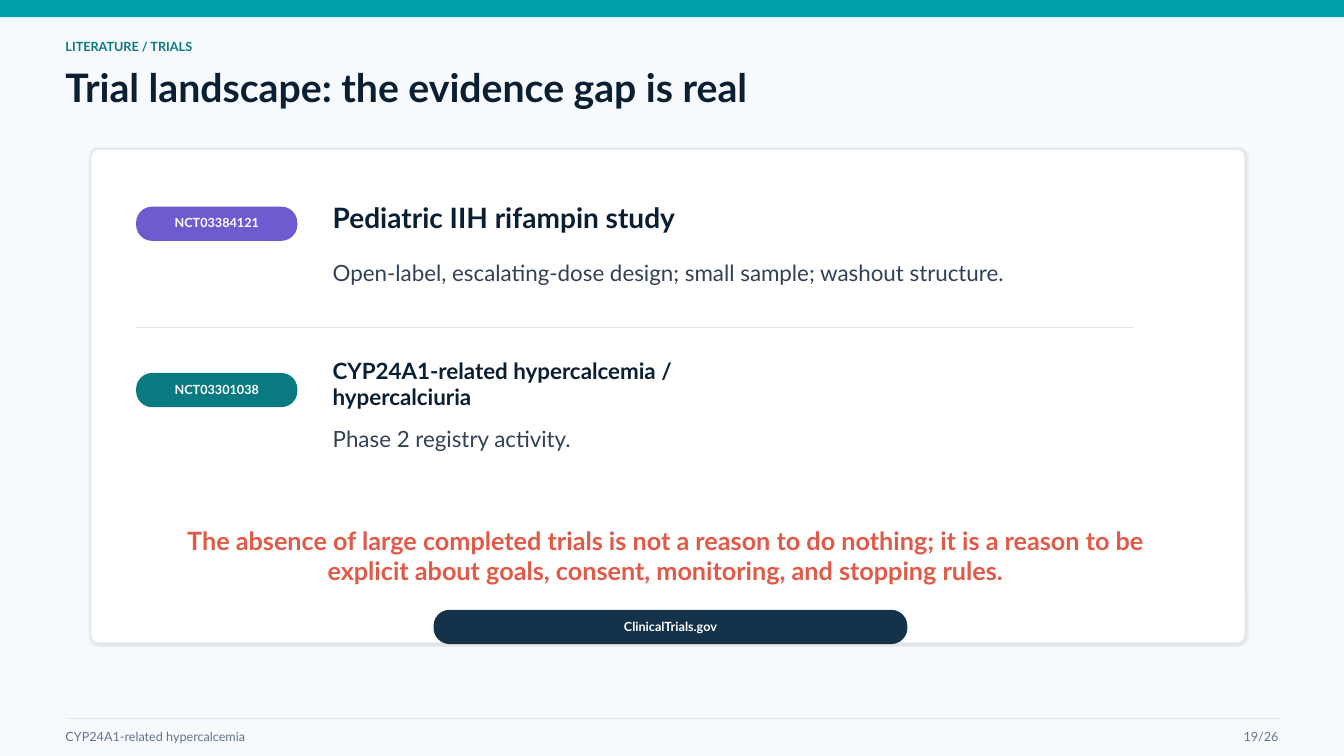
"""Builds the trial landscape slide."""
from dataclasses import dataclass
from lxml import etree
from pptx import Presentation
from pptx import util as u
from pptx.dml.color import RGBColor
from pptx.enum import shapes, text
from pptx.oxml.ns import qn

TAG = "LITERATURE / TRIALS"
TITLE = "Trial landscape: the evidence gap is real"
TRIALS = [
    {"id": "NCT03384121", "name": "Pediatric IIH rifampin study", "size": 20,
     "note": "Open-label, escalating-dose design; small sample; washout structure.",
     "color": "6D5BD0"},
    {"id": "NCT03301038", "name": "CYP24A1-related hypercalcemia / hypercalciuria", "size": 16,
     "note": "Phase 2 registry activity.", "color": "087A80"},
]
POINT = ("The absence of large completed trials is not a reason to do nothing; "
         "it is a reason to be explicit about goals, consent, monitoring, and stopping rules.")
SOURCE = "ClinicalTrials.gov"
FOOTER = "CYP24A1-related hypercalcemia"
PAGE = "19/26"


@dataclass(frozen=True)
class Theme:
    """Colours, font and type sizes."""
    font: str = "Lato"
    back: str = "F7FAFC"
    bar: str = "00A0A8"
    teal: str = "087A80"
    ink: str = "0B1F33"
    body: str = "334155"
    mute: str = "64748B"
    rule: str = "E2E8F0"
    white: str = "FFFFFF"
    alert: str = "E05A47"
    navy: str = "14324A"
    small: int = 9
    mid: int = 16
    call: int = 18
    head: int = 28


T = Theme()
LEFT, CENTER, RIGHT = text.PP_ALIGN.LEFT, text.PP_ALIGN.CENTER, text.PP_ALIGN.RIGHT
RECT, ROUND = shapes.MSO_SHAPE.RECTANGLE, shapes.MSO_SHAPE.ROUNDED_RECTANGLE


def rgb(color):
    """Turn a hex string into a colour."""
    return RGBColor.from_string(color)


def label(slide, box, words, size, color, bold=False, align=LEFT):
    """Add one line of text in a box without margins."""
    frame = slide.shapes.add_textbox(*map(u.Inches, box)).text_frame
    frame.word_wrap = True
    frame.vertical_anchor = text.MSO_ANCHOR.MIDDLE
    frame.margin_left = frame.margin_right = frame.margin_top = frame.margin_bottom = 0
    para = frame.paragraphs[0]
    para.alignment = align
    run = para.add_run()
    run.text = words
    run.font.name, run.font.size, run.font.bold = T.font, u.Pt(size), bold
    run.font.color.rgb = rgb(color)


def block(slide, kind, box, fill, round_by=None):
    """Add a filled shape with no line or shadow."""
    shape = slide.shapes.add_shape(kind, *map(u.Inches, box))
    shape.shadow.inherit = False
    shape.fill.solid()
    shape.fill.fore_color.rgb = rgb(fill)
    shape.line.fill.background()
    if round_by is not None:
        shape.adjustments[0] = round_by
    return shape


def pill(slide, left, top, width, words, fill):
    """Add a rounded badge with its label."""
    block(slide, ROUND, (left, top, width, 0.34), fill, 0.47)
    label(slide, (left + 0.08, top + 0.07, width - 0.16, 0.18), words,
          T.small, T.white, True, CENTER)


def rule(slide, left, right, top):
    """Add a thin level line."""
    line = slide.shapes.add_connector(
        shapes.MSO_CONNECTOR.STRAIGHT, *map(u.Inches, (left, top, right, top)))
    line.line.color.rgb = rgb(T.rule)
    line.line.width = u.Pt(1)
    etree.SubElement(line._element.spPr, qn("a:effectLst"))


def card(slide, box):
    """Add the white panel with a soft shadow."""
    shape = block(slide, ROUND, box, T.white, 0.016)
    shape.line.color.rgb = rgb(T.rule)
    shape.line.width = u.Pt(1)
    effects = shape._element.spPr.find(qn("a:effectLst"))
    shade = etree.SubElement(effects, qn("a:outerShdw"), blurRad=str(u.Pt(1.5)),
                             dist=str(u.Pt(0.7)), dir=str(45 * 60000),
                             algn="tl", rotWithShape="0")
    tint = etree.SubElement(shade, qn("a:srgbClr"), val="000000")
    etree.SubElement(tint, qn("a:alpha"), val="12000")


def main():
    """Lay out the slide and save it."""
    deck = Presentation()
    deck.slide_width, deck.slide_height = u.Inches(13.33), u.Inches(7.5)
    slide = deck.slides.add_slide(deck.slide_layouts[6])
    slide.background.fill.solid()
    slide.background.fill.fore_color.rgb = rgb(T.back)

    edge, pad, col = 0.65, 1.35, 3.3
    block(slide, RECT, (0, 0, 13.33, 0.17), T.bar)
    label(slide, (edge, 0.34, 2.6, 0.25), TAG, T.small, T.teal, True)
    label(slide, (edge, 0.57, 10.8, 0.58), TITLE, T.head, T.ink, True)
    rule(slide, edge, 12.7, 7.13)
    label(slide, (edge, 7.22, 5.8, 0.18), FOOTER, T.small, T.mute)
    label(slide, (12.08, 7.22, 0.6, 0.18), PAGE, T.small, T.mute, align=RIGHT)

    card(slide, (0.9, 1.48, 11.45, 4.9))
    first, step = 2.05, 1.65
    for i, trial in enumerate(TRIALS):
        top = first + i * step
        if i:
            rule(slide, pad, 11.25, top - 0.45)
        pill(slide, pad, top, 1.6, trial["id"], trial["color"])
        label(slide, (col, top - 0.02, 3.8, 0.25), trial["name"], trial["size"], T.ink, True)
        label(slide, (col, top + 0.44, 7.75, 0.42), trial["note"], T.mid, T.body)

    label(slide, (1.55, 5.3, 10.1, 0.42), POINT, T.call, T.alert, True, CENTER)
    pill(slide, 4.3, 6.05, 4.7, SOURCE, T.navy)
    deck.save("out.pptx")


if __name__ == "__main__":
    main()
